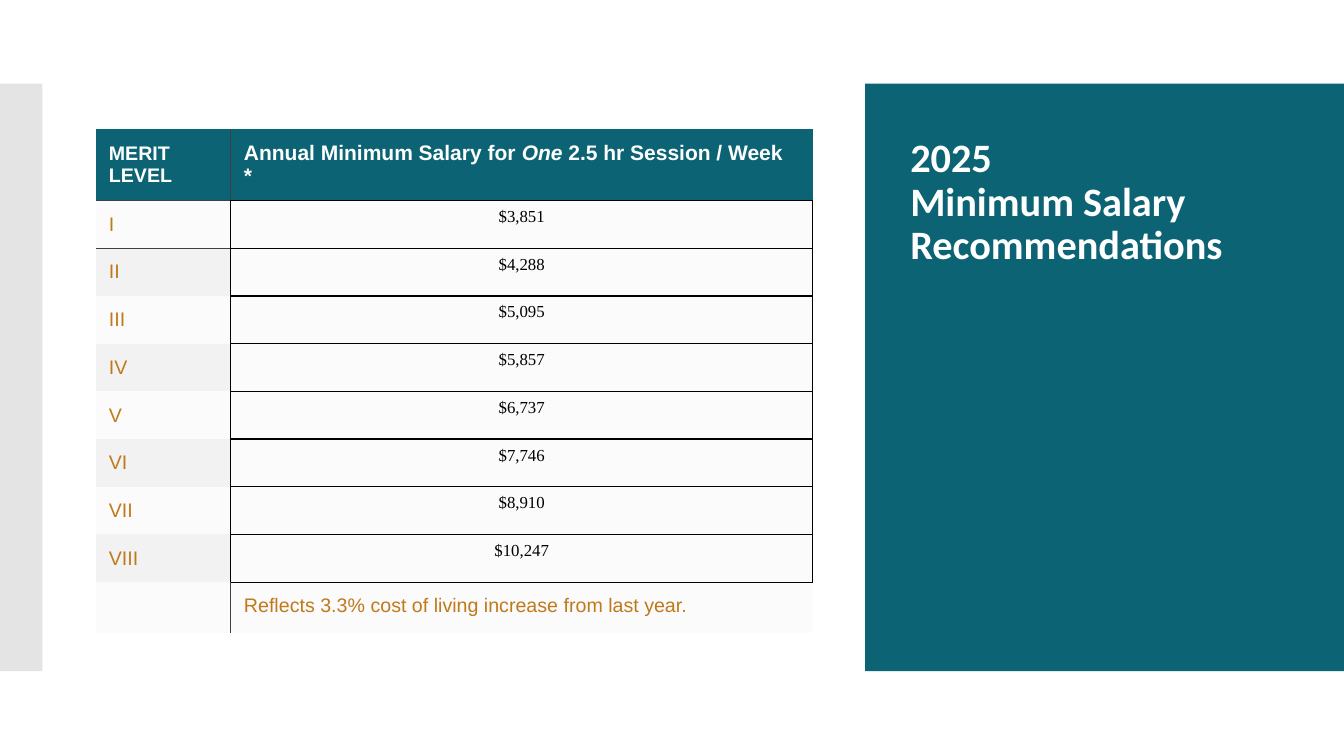
from pptx import Presentation
from pptx.dml.color import RGBColor
from pptx.enum import shapes, text
from pptx.oxml import parse_xml
from pptx.oxml.ns import nsdecls
from pptx.oxml.xmlchemy import OxmlElement
from pptx.util import Inches, Pt

TEAL = RGBColor(0x0B, 0x63, 0x74)
GREY = RGBColor(0xC8, 0xC8, 0xC8)
BAND = RGBColor(0xF2, 0xF2, 0xF2)
RULE = RGBColor(0x3F, 0x3F, 0x3F)
OCHRE = RGBColor(0xC0, 0x79, 0x1B)
BLACK = RGBColor(0, 0, 0)
WHITE = RGBColor(0xFF, 0xFF, 0xFF)

NO_STYLE = "{2D5ABB26-0587-4C30-8999-92F81FD0307C}"
LABEL_INSETS = (0.13, 0.1, 0.16, 0.1)
SALARY_INSETS = (0.07, 0.07, 0.07, 0.07)
THIN, SOLID = (RULE, 0.75), (BLACK, 1)
SALARIES = [
    ("I", "$3,851"), ("II", "$4,288"), ("III", "$5,095"), ("IV", "$5,857"),
    ("V", "$6,737"), ("VI", "$7,746"), ("VII", "$8,910"), ("VIII", "$10,247"),
]


def set_fill(fill, props, color, opacity=100):
    """Fill solidly; props is the XML element that holds the fill."""
    fill.solid()
    fill.fore_color.rgb = color
    if opacity < 100:
        alpha = OxmlElement("a:alpha")
        alpha.set("val", str(opacity * 1000))
        props.xpath("a:solidFill/a:srgbClr")[0].append(alpha)


def write(tf, *runs, size, color, font="Arial", bold=False, align=None, spacing=None):
    """Write one paragraph; a run given as a tuple is italic."""
    p = tf.paragraphs[0]
    p.alignment = align
    p.line_spacing = spacing
    for i, line in enumerate(runs):
        italic = isinstance(line, tuple)
        for j, part in enumerate((line[0] if italic else line).split("\n")):
            if j:
                p.add_line_break()
            r = p.add_run()
            r.text = part
            r.font.name, r.font.size = font, Pt(size)
            r.font.bold, r.font.italic = bold, italic
            r.font.color.rgb = color


def set_borders(cell, **sides):
    """Set borders by side letter: L, R, T, B."""
    props = cell._tc.get_or_add_tcPr()
    for i, side in enumerate(s for s in "LRTB" if s in sides):
        color, width = sides[side]
        props.insert(i, parse_xml(
            f'<a:ln{side} {nsdecls("a")} w="{Pt(width)}"><a:solidFill>'
            f'<a:srgbClr val="{color}"/></a:solidFill></a:ln{side}>'))


def style_cell(cell, color, opacity=100, insets=LABEL_INSETS,
               anchor=text.MSO_ANCHOR.MIDDLE, **borders):
    (cell.margin_left, cell.margin_top,
     cell.margin_right, cell.margin_bottom) = map(Inches, insets)
    cell.vertical_anchor = anchor
    set_fill(cell.fill, cell._tc.get_or_add_tcPr(), color, opacity)
    set_borders(cell, **borders)
    return cell.text_frame


def add_panel(slide, left, top, width, height, color, opacity=100):
    sp = slide.shapes.add_shape(shapes.MSO_SHAPE.RECTANGLE, Inches(left),
                                Inches(top), Inches(width), Inches(height))
    sp.shadow.inherit = False
    sp.line.fill.background()
    set_fill(sp.fill, sp._element.spPr, color, opacity)


def add_title_panel(slide, left, top, width, height):
    add_panel(slide, left, top, width, height, TEAL)
    sp = slide.shapes.add_textbox(Inches(left + 0.35), Inches(top + 0.35),
                                  Inches(4), Inches(1.67))
    tf = sp.text_frame
    tf.word_wrap = True
    tf.vertical_anchor = text.MSO_ANCHOR.MIDDLE
    write(tf, "2025\nMinimum Salary Recommendations", size=28.8,
          color=WHITE, font="Calibri", bold=True, spacing=0.9)


def add_salary_table(slide, left, top, width, height):
    level_width, header_height = 1.34, 0.71
    count = len(SALARIES) + 2
    frame = slide.shapes.add_table(count, 2, Inches(left), Inches(top),
                                   Inches(width), Inches(height))
    table = frame.table
    table._tbl.tblPr.xpath("a:tableStyleId")[0].text = NO_STYLE
    table.first_row = table.horz_banding = False
    table.columns[0].width = Inches(level_width)
    table.columns[1].width = Inches(width - level_width)
    for i, row in enumerate(table.rows):
        row.height = Inches((height - header_height) / (count - 1) if i else header_height)

    tf = style_cell(table.cell(0, 0), TEAL, R=THIN, B=THIN)
    write(tf, "MERIT LEVEL", size=14, color=WHITE, bold=True)
    tf = style_cell(table.cell(0, 1), TEAL, L=THIN, B=SOLID)
    write(tf, "Annual Minimum Salary for ", ("One",), " 2.5 hr Session / Week *",
          size=15, color=WHITE, bold=True)

    for i, (level, salary) in enumerate(SALARIES, 1):
        top_rule = {"T": THIN} if i == 1 else {}
        tf = style_cell(table.cell(i, 0), BAND, 29 if i % 2 else 100,
                        R=SOLID, **top_rule)
        write(tf, level, size=14, color=OCHRE)
        tf = style_cell(table.cell(i, 1), BAND, 29, SALARY_INSETS,
                        text.MSO_ANCHOR.TOP, L=SOLID, R=SOLID, T=SOLID, B=SOLID)
        write(tf, salary, size=12, color=BLACK, font="Times New Roman",
              align=text.PP_ALIGN.CENTER)

    style_cell(table.cell(count - 1, 0), BAND, 29, R=THIN)
    tf = style_cell(table.cell(count - 1, 1), BAND, 29, L=THIN, T=SOLID)
    write(tf, "Reflects 3.3% cost of living increase from last year.",
          size=14, color=OCHRE, spacing=0.8)


def main():
    prs = Presentation()
    prs.slide_width, prs.slide_height = Inches(13.33), Inches(7.5)
    slide = prs.slides.add_slide(prs.slide_layouts[6])
    add_title_panel(slide, 8.58, 0.83, 4.75, 5.83)
    add_panel(slide, 0, 0.83, 0.42, 5.83, GREY, 49)
    add_salary_table(slide, 0.95, 1.28, 7.11, 4.97)
    prs.save("out.pptx")


if __name__ == "__main__":
    main()
